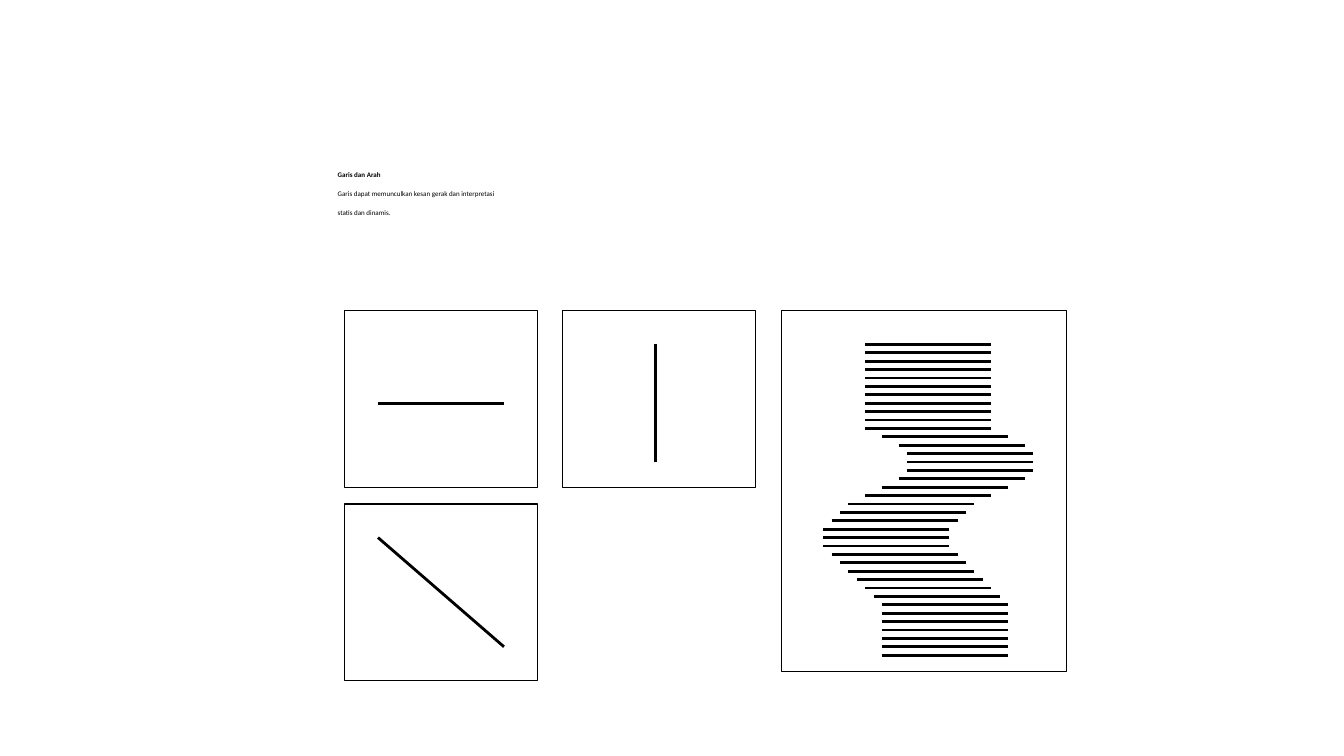
from dataclasses import dataclass

from lxml import etree
from pptx import Presentation
from pptx import util as u
from pptx.dml.color import RGBColor
from pptx.enum import shapes, text
from pptx.oxml import ns


@dataclass(frozen=True)
class Theme:
    ink: RGBColor = RGBColor(0, 0, 0)
    font: str = "Calibri"
    text_size: int = 5
    frame_width: float = 0.75
    stroke_width: int = 2


def px(n):
    return u.Emu(n * 9525)


class Page:
    def __init__(self, prs, theme):
        self.theme = theme
        self.s = prs.slides.add_slide(prs.slide_layouts.get_by_name("Title and Content"))
        title = self.s.shapes.title
        title.element.getparent().remove(title.element)

    def body(self, x, y, w, h, lines):
        sp = self.s.placeholders[1]
        sp.left, sp.top, sp.width, sp.height = map(px, (x, y, w, h))
        tf = sp.text_frame
        tf.word_wrap = True
        tf.auto_size = text.MSO_AUTO_SIZE.NONE
        tf.vertical_anchor = text.MSO_ANCHOR.TOP
        tf.text = "\n".join(lines)
        for i, p in enumerate(tf.paragraphs):
            p.font.name = self.theme.font
            p.font.size = u.Pt(self.theme.text_size)
            p.font.bold = i == 0
            p.font.color.rgb = self.theme.ink
            p.alignment = text.PP_ALIGN.LEFT
            pPr = p._p.get_or_add_pPr()
            pPr.set("marL", "0")
            pPr.set("indent", "0")
            pPr.insert(0, etree.Element(ns.qn("a:buNone")))
            p.line_spacing = 0.6
            p.space_before = u.Pt(10)

    def frame(self, x, y, w, h):
        sp = self.s.shapes.add_shape(shapes.MSO_SHAPE.RECTANGLE, *map(px, (x, y, w, h)))
        sp.shadow.inherit = False
        sp.fill.background()
        sp.line.color.rgb = self.theme.ink
        sp.line.width = u.Pt(self.theme.frame_width)

    def stroke(self, x1, y1, x2, y2):
        c = self.s.shapes.add_connector(
            shapes.MSO_CONNECTOR.STRAIGHT, *map(px, (x1, y1, x2, y2)))
        c.line.color.rgb = self.theme.ink
        c.line.width = u.Pt(self.theme.stroke_width)
        etree.SubElement(c._element.spPr, ns.qn("a:effectLst"))


def main():
    prs = Presentation()
    prs.slide_width, prs.slide_height = px(1280), px(720)
    page = Page(prs, Theme())

    page.body(312, 160, 688, 136, [
        "Garis dan Arah",
        "Garis dapat memunculkan kesan gerak dan interpretasi",
        "statis dan dinamis.",
    ])

    for x, y in [(328, 296), (328, 480), (536, 296)]:
        page.frame(x, y, 184, 168)
    page.stroke(624, 328, 624, 440)
    page.stroke(360, 384, 480, 384)
    page.stroke(360, 512, 480, 616)

    page.frame(744, 296, 272, 344)
    step, length = 8, 120
    bulge_right = [7, 9, 10, 10, 10, 9, 7]
    bulge_left = [5, 3, 2, 1, 0, 0, 0, 1, 2, 3, 4, 5, 6]
    shifts = [5] * 11 + bulge_right + bulge_left + [7] * 7
    for row, shift in enumerate(shifts):
        x, y = 784 + shift * step, 328 + row * step
        page.stroke(x, y, x + length, y)

    prs.save("out.pptx")


if __name__ == "__main__":
    main()
